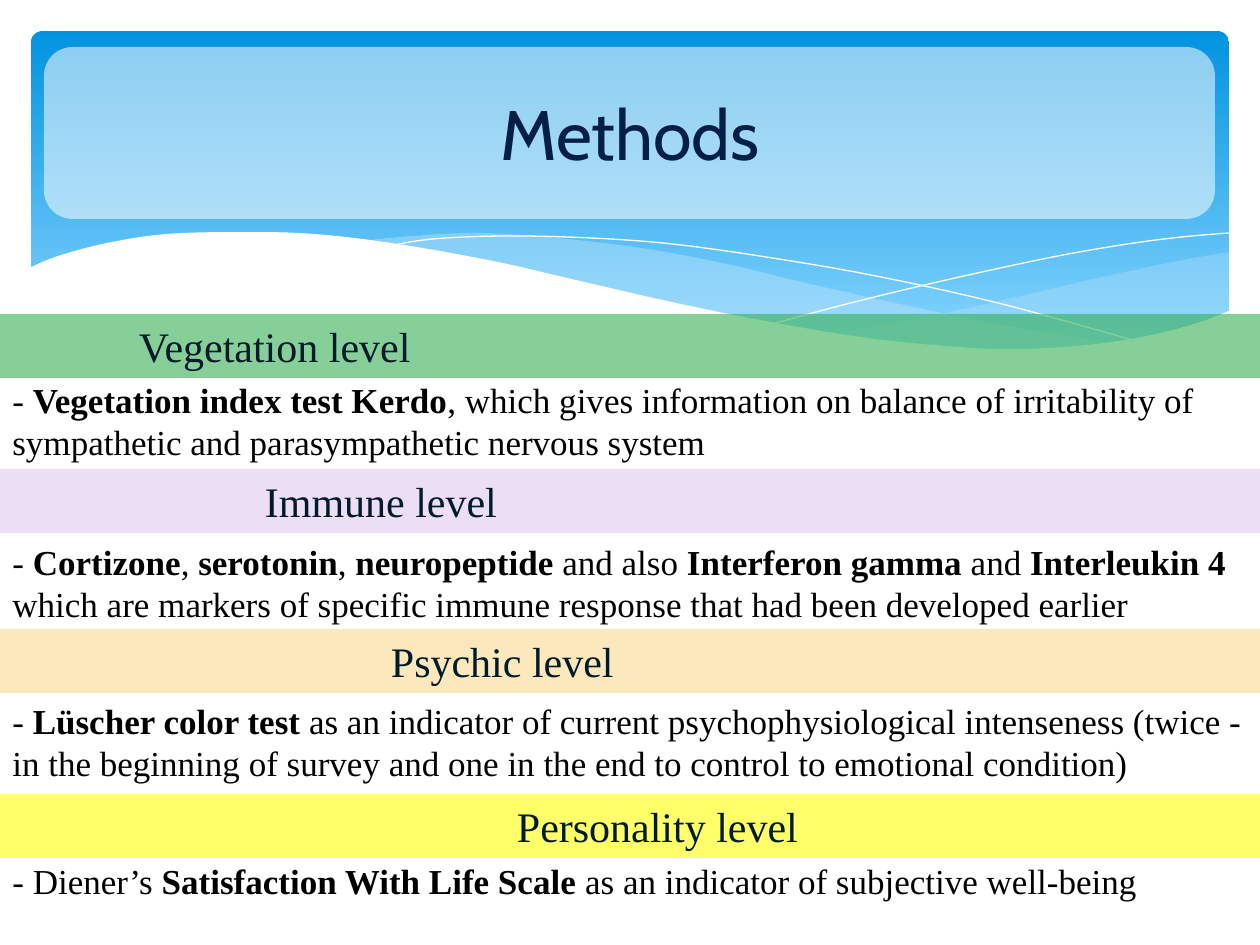
from pptx import Presentation
from pptx.dml.color import RGBColor
from pptx.enum.shapes import MSO_SHAPE as Shape
from pptx.enum.text import MSO_ANCHOR as Anchor, PP_ALIGN as Align
from pptx.oxml import parse_xml
from pptx.oxml.ns import nsdecls
from pptx.util import Emu, Pt

EMU_PER_PX = 914400 / 126
PAGE_WIDTH, PAGE_HEIGHT = 1260, 945
INDENT, INSET, BAND_HEIGHT = 126, 13, 64

WHITE = RGBColor(0xFF, 0xFF, 0xFF)
BLACK = RGBColor(0x00, 0x00, 0x00)
SKY_TOP = RGBColor(0x02, 0x93, 0xE0)
SKY_BOTTOM = RGBColor(0x83, 0xD3, 0xFE)
WAVE_BLUE = RGBColor(0xC6, 0xE7, 0xFC)
TITLE_NAVY = RGBColor(0x04, 0x1F, 0x44)
BAND_INK = RGBColor(0x02, 0x1B, 0x2B)
GREEN = RGBColor(0x32, 0xAE, 0x51)
LILAC = RGBColor(0xDF, 0xC9, 0xEF)
SAND = RGBColor(0xF9, 0xD9, 0x8C)
YELLOW = RGBColor(0xFF, 0xFF, 0x00)
TITLE_FONT, BODY_FONT = "Cabin", "Times New Roman"

RIGHT_WAVE = [
    [(802, 303), (859, 293), (951, 274), (1054, 250), (1147, 230), (1199, 221)],
    [(1199, 280), (1119, 305), (1056, 316), (995, 319), (938, 318), (875, 312), (802, 303)],
]
MIDDLE_WAVE = [
    [(329, 210), (382, 205), (448, 202), (526, 207), (617, 218), (705, 235),
     (762, 249), (859, 271), (945, 289), (1024, 303), (1094, 313)],
    [(1094, 313), (1037, 318), (972, 319), (896, 315), (807, 304), (705, 287),
     (588, 261), (507, 241), (425, 225), (329, 210)],
]
FALLING_LINE = [(358, 215), (402, 208), (474, 205), (560, 207), (641, 213),
                (735, 226), (845, 245), (971, 273), (1112, 312)]
RISING_LINE = [(741, 293), (816, 273), (911, 250), (1022, 226), (1097, 213),
               (1151, 206), (1198, 202)]
WHITE_WAVE = [
    [(-2, 237), (27, 225), (76, 212), (135, 203), (212, 201), (284, 203),
     (367, 213), (462, 230), (532, 246), (636, 270), (729, 289), (836, 307),
     (928, 316), (988, 318), (1056, 314), (1116, 305), (1166, 292), (1200, 279)],
    [(1200, 384), (-2, 384)],
]

LEVELS = [
    (314, 372, GREEN, "Vegetation level",
     "- *Vegetation index test Kerdo*, which gives information on balance of "
     "irritability of sympathetic and parasympathetic nervous system"),
    (469, 534, LILAC, "Immune level",
     "- *Cortizone*, *serotonin*, *neuropeptide *and also *Interferon gamma *and "
     "*Interleukin 4* which are markers of specific immune response that had been "
     "developed earlier"),
    (629, 693, SAND, "Psychic level",
     "- *Lüscher color test *as an indicator of current psychophysiological "
     "intenseness (twice - in the beginning of survey and one in the end to control "
     "to emotional condition)"),
    (794, 853, YELLOW, "Personality level",
     "- Diener’s *Satisfaction With Life Scale *as an indicator of subjective "
     "well-being"),
]


def px(length):
    """Turn pixels into EMU."""
    return Emu(round(length * EMU_PER_PX))


def paint(shape, color, opacity=100):
    """Give a shape a flat fill with no line or shadow."""
    shape.shadow.inherit = False
    shape.line.fill.background()
    shape.fill.solid()
    shape.fill.fore_color.rgb = color
    if opacity < 100:
        alpha = parse_xml(f'<a:alpha {nsdecls("a")} val="{opacity * 1000}"/>')
        shape.fill._xPr.find(".//" + "{http://schemas.openxmlformats.org/drawingml/2006/main}srgbClr").append(alpha)


def style(span, font, size, color, bold=False):
    """Set the font of one run."""
    span.font.name = font
    span.font.size = Pt(size)
    span.font.color.rgb = color
    span.font.bold = bold


def add_box(page, kind, left, top, width, height):
    """Add a preset shape at a pixel box."""
    return page.shapes.add_shape(kind, px(left), px(top), px(width), px(height))


def smooth(knots, steps=5):
    """Return points of a Catmull-Rom curve through the knots."""
    padded = [knots[0], *knots, knots[-1]]
    points = []
    for a, b, c, d in zip(padded, padded[1:], padded[2:], padded[3:]):
        for step in range(steps):
            t = step / steps
            points.append(tuple(
                (2 * q + (r - p) * t + (2 * p - 5 * q + 4 * r - s) * t ** 2
                 + (3 * q - p - 3 * r + s) * t ** 3) / 2
                for p, q, r, s in zip(a, b, c, d)))
    return points + [knots[-1]]


def add_curve(page, left, top, edges, close):
    """Draw smooth edges joined end to end."""
    points = [(round((left + x) * EMU_PER_PX), round((top + y) * EMU_PER_PX))
              for edge in edges for x, y in smooth(edge)]
    builder = page.shapes.build_freeform(*points[0], scale=1.0)
    builder.add_line_segments(points[1:], close=close)
    return builder.convert_to_shape()


def add_header(page, left, top, width, height):
    """Draw the sky panel, its waves and the title."""
    sky = add_box(page, Shape.ROUNDED_RECTANGLE, left, top, width, height)
    sky.adjustments[0] = 0.034
    paint(sky, SKY_TOP)
    sky.fill.gradient()
    sky.fill.gradient_angle = 270
    for stop, color, position in zip(sky.fill.gradient_stops, (SKY_TOP, SKY_BOTTOM), (0, 0.9)):
        stop.color.rgb = color
        stop.position = position

    for edges, opacity in ((RIGHT_WAVE, 29), (MIDDLE_WAVE, 40)):
        paint(add_curve(page, left, top, edges, True), WAVE_BLUE, opacity)
    for knots in (FALLING_LINE, RISING_LINE):
        curve = add_curve(page, left, top, [knots], False)
        curve.shadow.inherit = False
        curve.fill.background()
        curve.line.color.rgb = WHITE
        curve.line.width = Pt(0)
    paint(add_curve(page, left, top, WHITE_WAVE, True), WHITE)

    panel = add_box(page, Shape.ROUNDED_RECTANGLE, left + 13, top + 16, width - 27, 172)
    paint(panel, WHITE, 54)
    title = page.shapes.add_textbox(px(left + 32), px(top + 16), px(width - 64), px(172))
    frame = title.text_frame
    frame.word_wrap = True
    frame.vertical_anchor = Anchor.MIDDLE
    frame.text = "Methods"
    para = frame.paragraphs[0]
    para.alignment = Align.CENTER
    style(para.runs[0], TITLE_FONT, 40, TITLE_NAVY)


def add_band(page, left, top, width, height, color, name, indent):
    """Draw a coloured band with its level name indented."""
    band = add_box(page, Shape.RECTANGLE, left, top, width, height)
    paint(band, color, 59)
    frame = band.text_frame
    frame.margin_left = px(INSET + indent)
    frame.vertical_anchor = Anchor.MIDDLE
    frame.text = name
    para = frame.paragraphs[0]
    para.alignment = Align.LEFT
    style(para.runs[0], BODY_FONT, 24, BAND_INK)


def add_note(page, left, top, width, height, text):
    """Write a description whose starred parts are bold."""
    box = page.shapes.add_textbox(px(left), px(top), px(width), px(height))
    box.text_frame.word_wrap = True
    para = box.text_frame.paragraphs[0]
    for index, part in enumerate(text.split("*")):
        span = para.add_run()
        span.text = part
        style(span, BODY_FONT, 20, BLACK, bold=index % 2 == 1)


def main():
    """Build the deck and save it."""
    deck = Presentation()
    deck.slide_width, deck.slide_height = px(PAGE_WIDTH), px(PAGE_HEIGHT)
    page = deck.slides.add_slide(deck.slide_layouts[6])
    add_header(page, 31, 31, 1198, 340)
    for number, (band_top, note_top, color, name, note) in enumerate(LEVELS, 1):
        add_band(page, 0, band_top, PAGE_WIDTH, BAND_HEIGHT, color, name, number * INDENT)
        add_note(page, 0, note_top, PAGE_WIDTH, 97 if number < len(LEVELS) else 55, note)
    deck.save("out.pptx")


if __name__ == "__main__":
    main()
